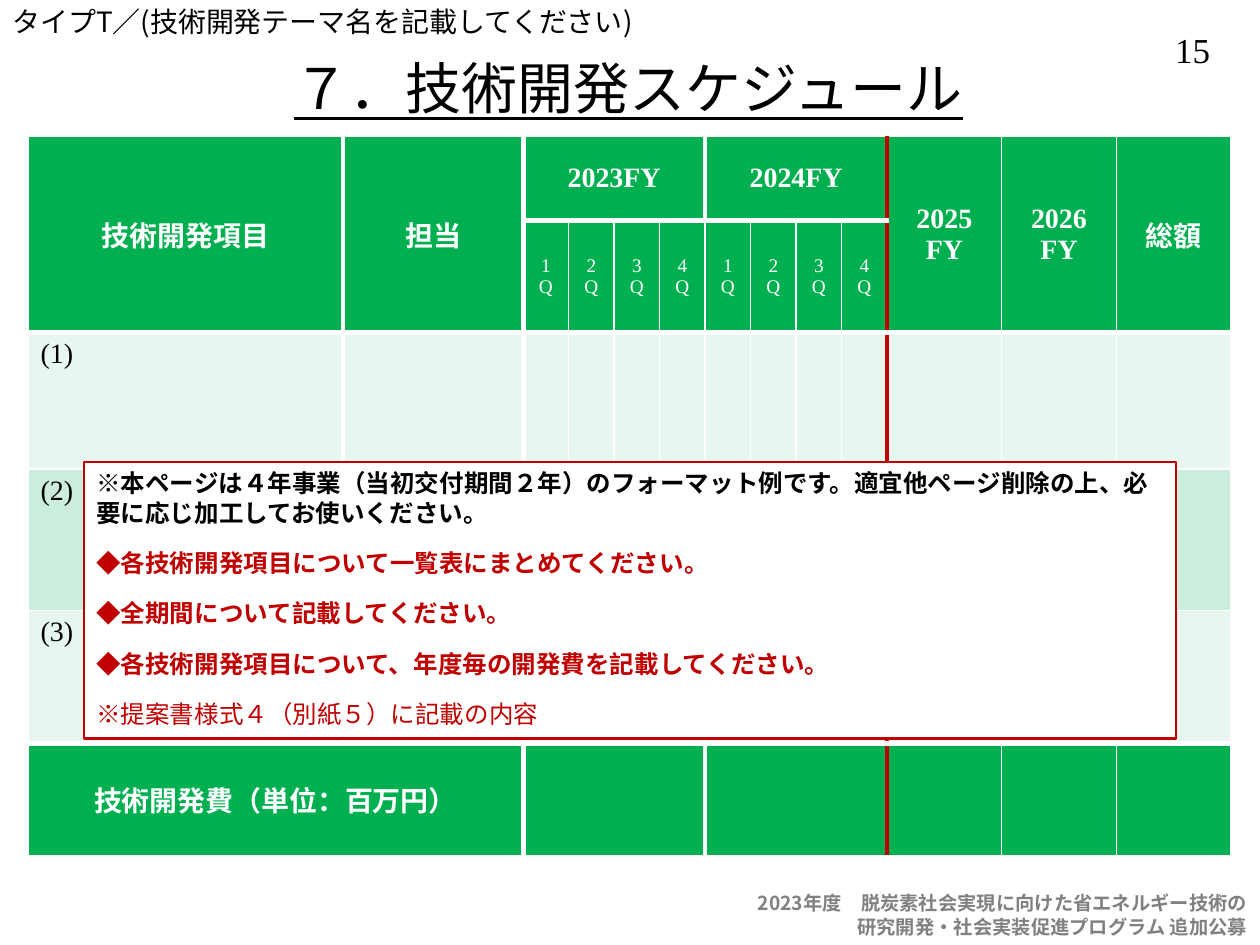
"""Build the technical development schedule slide."""
from dataclasses import dataclass
from itertools import accumulate, product

from lxml.etree import SubElement
from pptx import Presentation
from pptx.dml.color import RGBColor
from pptx.enum.shapes import MSO_SHAPE as Shape
from pptx.enum.text import MSO_ANCHOR as Anchor, MSO_AUTO_SIZE as AutoSize, PP_ALIGN as Align
from pptx.oxml.ns import qn
from pptx.util import Pt

WHITE, BLACK, GRAY = "FFFFFF", "000000", "808080"
GREEN, LIGHT, PALE, RED = "00B050", "CCECDE", "E7F6EF", "C00000"


def color(value):
    return RGBColor.from_string(value)


def write(frame, text, size=16, ink=BLACK, bold=False, underline=None,
          align=Align.LEFT, latin="Noto Sans CJK JP", before=0, first=True):
    for index, line in enumerate(text.split("\n")):
        paragraph = frame.paragraphs[0] if first and index == 0 else frame.add_paragraph()
        paragraph.alignment = align
        if before:
            paragraph.space_before = Pt(before)
        run = paragraph.add_run()
        run.text = line
        font = run.font
        font.size, font.bold, font.underline, font.name = Pt(size), bold, underline, latin
        font.color.rgb = color(ink)
        SubElement(font._element, qn("a:ea"), typeface="Noto Sans CJK JP")


def set_border(cell, side, ink, width):
    properties = cell._tc.get_or_add_tcPr()
    line = SubElement(properties, qn(f"a:ln{side}"), w=str(Pt(width)))
    fill = SubElement(line, qn("a:solidFill"))
    SubElement(fill, qn("a:srgbClr"), val=ink)


@dataclass
class SlideBuilder:
    slide: object
    serif: str = "Times New Roman"

    def title(self, text, box):
        title = self.slide.shapes.title
        title.left, title.top, title.width, title.height = map(Pt, box)
        title.text_frame.auto_size = AutoSize.NONE
        title.text_frame.vertical_anchor = Anchor.MIDDLE
        write(title.text_frame, text, size=32, underline=True, align=Align.CENTER)

    def text(self, text, box, wrap=True, **style):
        frame = self.slide.shapes.add_textbox(*map(Pt, box)).text_frame
        frame.word_wrap = wrap
        write(frame, text, **style)

    def note(self, paragraphs, box):
        shape = self.slide.shapes.add_shape(Shape.RECTANGLE, *map(Pt, box))
        shape.shadow.inherit = False
        shape.fill.solid()
        shape.fill.fore_color.rgb = color(WHITE)
        shape.line.color.rgb = color(RED)
        shape.line.width = Pt(1.5)
        frame = shape.text_frame
        frame.word_wrap = True
        frame.vertical_anchor = Anchor.TOP
        for index, (text, ink, bold) in enumerate(paragraphs):
            write(frame, text, size=14, ink=ink, bold=bold,
                  before=12 if index else 0, first=index == 0)

    def table(self, left, top, columns, rows, fills, spans):
        frame = self.slide.shapes.add_table(len(rows), len(columns), Pt(left), Pt(top),
                                            Pt(sum(columns)), Pt(sum(rows)))
        table = frame.table
        for column, width in zip(table.columns, columns):
            column.width = Pt(width)
        for row, height in zip(table.rows, rows):
            row.height = Pt(height)
        areas = {spot: (*spot, spot[0] + 1, spot[1] + 1)
                 for spot in product(range(len(rows)), range(len(columns)))}
        for (row, column), (height, width) in spans.items():
            bottom, right = row + height, column + width
            table.cell(row, column).merge(table.cell(bottom - 1, right - 1))
            for spot in product(range(row, bottom), range(column, right)):
                areas[spot] = (row, column, bottom, right)
        for (row, column), area in areas.items():
            cell = table.cell(row, column)
            self.borders(cell, row, column, area)
            cell.fill.solid()
            cell.fill.fore_color.rgb = color(fills[row])
        return table

    def borders(self, cell, row, column, area):
        top, left, bottom, right = area
        sides = {"L": (left, column), "R": (right, column + 1),
                 "T": (top, row), "B": (bottom, row + 1)}
        for side, (edge, own_edge) in sides.items():
            if edge != own_edge and (row, column) != (top, left):
                continue
            if side in "LR":
                thick = edge in (1, 2, 10) or (edge == 6 and row in (0, 5))
                set_border(cell, side, RED if edge == 10 else WHITE, 3 if thick else 1)
            else:
                set_border(cell, side, WHITE, 3 if edge in (1, 2, 5) else 1)

    def label(self, table, row, column, text, anchor=Anchor.MIDDLE, **style):
        cell = table.cell(row, column)
        cell.vertical_anchor = anchor
        write(cell.text_frame, text, latin=self.serif, **style)


def add_schedule(builder):
    columns = [180, 103] + [26] * 8 + [65.5] * 3
    rows = [48, 64, 78, 81, 76, 64]
    spans = {(0, column): (2, 1) for column in (0, 1, 10, 11, 12)}
    spans |= {(row, column): (1, 4) for row in (0, 5) for column in (2, 6)}
    spans[5, 0] = (1, 2)
    table = builder.table(16, 78, columns, rows,
                          [GREEN, GREEN, PALE, LIGHT, PALE, GREEN], spans)
    headings = {(0, 0): "技術開発項目", (0, 1): "担当", (0, 2): "2023FY", (0, 6): "2024FY",
                (0, 10): "2025\nFY", (0, 11): "2026\nFY", (0, 12): "総額",
                (5, 0): "技術開発費（単位：百万円）"}
    for (row, column), text in headings.items():
        builder.label(table, row, column, text, ink=WHITE, bold=True, align=Align.CENTER)
    for index in range(8):
        builder.label(table, 1, index + 2, f"{index % 4 + 1}Q",
                      size=11, ink=WHITE, align=Align.CENTER)
    for number in range(1, 4):
        builder.label(table, number + 1, 0, f"({number})", anchor=Anchor.TOP)


def main():
    presentation = Presentation()
    presentation.slide_width, presentation.slide_height = Pt(720), Pt(540)
    builder = SlideBuilder(presentation.slides.add_slide(presentation.slide_layouts[5]))
    builder.text("15", (658, 13, 47, 31), wrap=False, size=20,
                 align=Align.CENTER, latin=builder.serif)
    builder.text("タイプT／(技術開発テーマ名を記載してください)", (0, -1, 605, 27))
    builder.text("2023年度　脱炭素社会実現に向けた省エネルギー技術の\n"
                 "研究開発・社会実装促進プログラム 追加公募",
                 (420, 506, 300, 34), size=11, ink=GRAY, bold=True, align=Align.RIGHT)
    builder.title("７．技術開発スケジュール", (53, 25, 612, 50))
    add_schedule(builder)
    builder.note([
        ("※本ページは４年事業（当初交付期間２年）のフォーマット例です。"
         "適宜他ページ削除の上、必要に応じ加工してお使いください。", BLACK, True),
        ("◆各技術開発項目について一覧表にまとめてください。", RED, True),
        ("◆全期間について記載してください。", RED, True),
        ("◆各技術開発項目について、年度毎の開発費を記載してください。", RED, True),
        ("※提案書様式４（別紙５）に記載の内容", RED, False),
    ], (48, 264, 624, 158))
    presentation.save("out.pptx")


if __name__ == "__main__":
    main()
